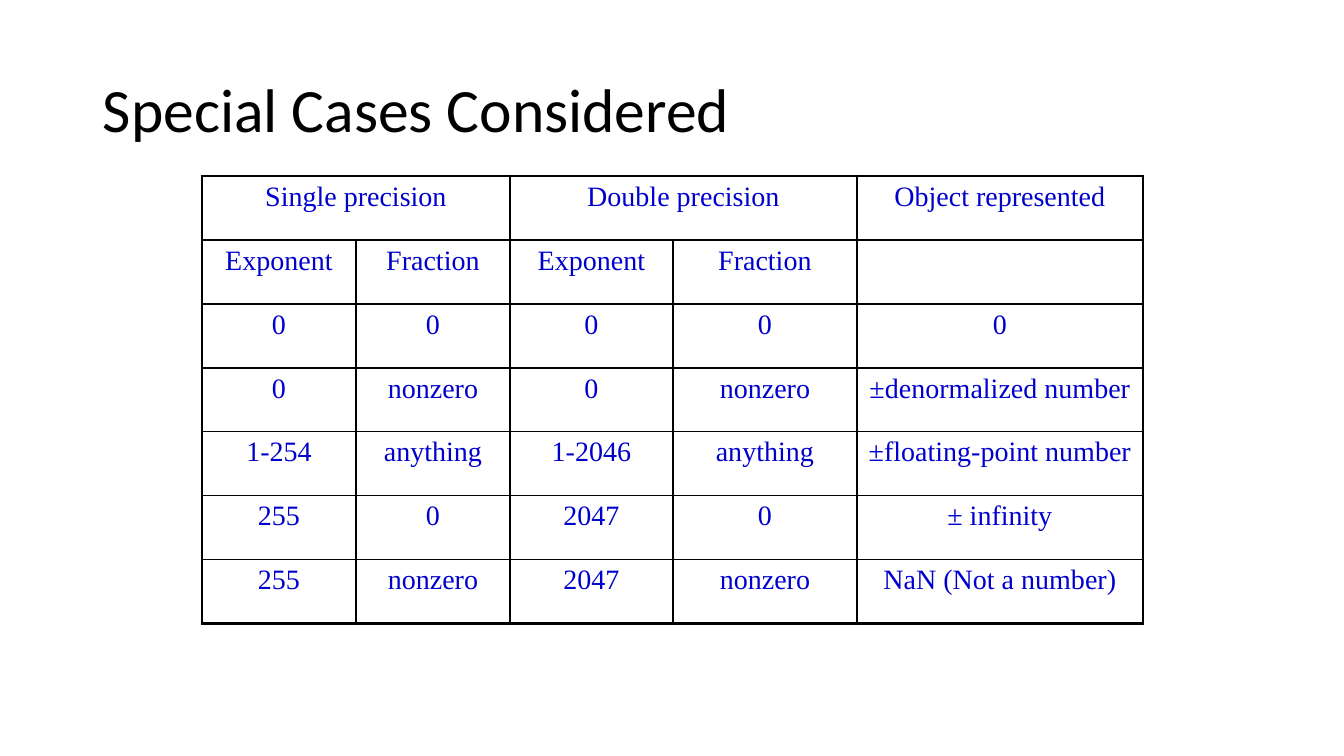
from lxml import etree
from pptx import Presentation, util as u
from pptx.dml.color import RGBColor
from pptx.enum import text
from pptx.oxml import ns

# Content
TITLE = "Special Cases Considered"
ROWS = [
    ("Single precision", "", "Double precision", "", "Object represented"),
    ("Exponent", "Fraction", "Exponent", "Fraction", ""),
    ("0", "0", "0", "0", "0"),
    ("0", "nonzero", "0", "nonzero", "±denormalized number"),
    ("1-254", "anything", "1-2046", "anything", "±floating-point number"),
    ("255", "0", "2047", "0", "± infinity"),
    ("255", "nonzero", "2047", "nonzero", "NaN (Not a number)"),
]
SPANS = (0, 2)  # first columns of the merged heading cells

# Look and layout
COLORS = {"ink": "000000", "cell": "0000CC"}
WIDTHS = (154, 154, 163, 184, 286)
LEFT, TOP, ROW_H = 202, 176, 64
THIN, THICK = 1, 2.25


def px(n):
    return u.Emu(round(n * 914400 / 100.8))


def style(par, face, size, color):
    par.font.name = face
    par.font.size = u.Pt(size)
    par.font.color.rgb = RGBColor.from_string(COLORS[color])


def border(cell, sides):
    props = cell._tc.get_or_add_tcPr()
    for i, (side, width) in enumerate(sides.items()):
        line = etree.Element(ns.qn("a:ln" + side), w=str(u.Pt(width)))
        fill = etree.SubElement(line, ns.qn("a:solidFill"))
        etree.SubElement(fill, ns.qn("a:srgbClr"), val=COLORS["ink"])
        props.insert(i, line)


def add_title(slide):
    frame = slide.shapes.add_textbox(px(93), px(40), px(1159), px(146)).text_frame
    frame.word_wrap = True
    frame.vertical_anchor = text.MSO_ANCHOR.MIDDLE
    par = frame.paragraphs[0]
    par.text = TITLE
    par.line_spacing = 0.9
    style(par, "Calibri", 44, "ink")


def add_cases(slide):
    rows, cols = len(ROWS), len(WIDTHS)
    table = slide.shapes.add_table(
        rows, cols, px(LEFT), px(TOP), px(sum(WIDTHS)), px(rows * ROW_H)).table
    table.first_row = table.horz_banding = False
    for col, width in zip(table.columns, WIDTHS):
        col.width = px(width)
    for row in table.rows:
        row.height = px(ROW_H)
    for c in SPANS:
        table.cell(0, c).merge(table.cell(0, c + 1))

    for r, words in enumerate(ROWS):
        for c, word in enumerate(words):
            cell = table.cell(r, c)
            cell.fill.background()
            # Thick lines on the outer edge only
            border(cell, {
                "L": THICK if c == 0 else THIN,
                "R": THICK if c == cols - 1 else THIN,
                "T": THICK if r == 0 else THIN,
                "B": THICK if r == rows - 1 else THIN,
            })
            par = cell.text_frame.paragraphs[0]
            if word:
                par.text = word
            par.alignment = text.PP_ALIGN.CENTER
            style(par, "Times New Roman", 20, "cell")


def main():
    deck = Presentation()
    deck.slide_width, deck.slide_height = px(1344), px(756)
    slide = deck.slides.add_slide(deck.slide_layouts[6])
    add_title(slide)
    add_cases(slide)
    deck.save("out.pptx")


if __name__ == "__main__":
    main()
